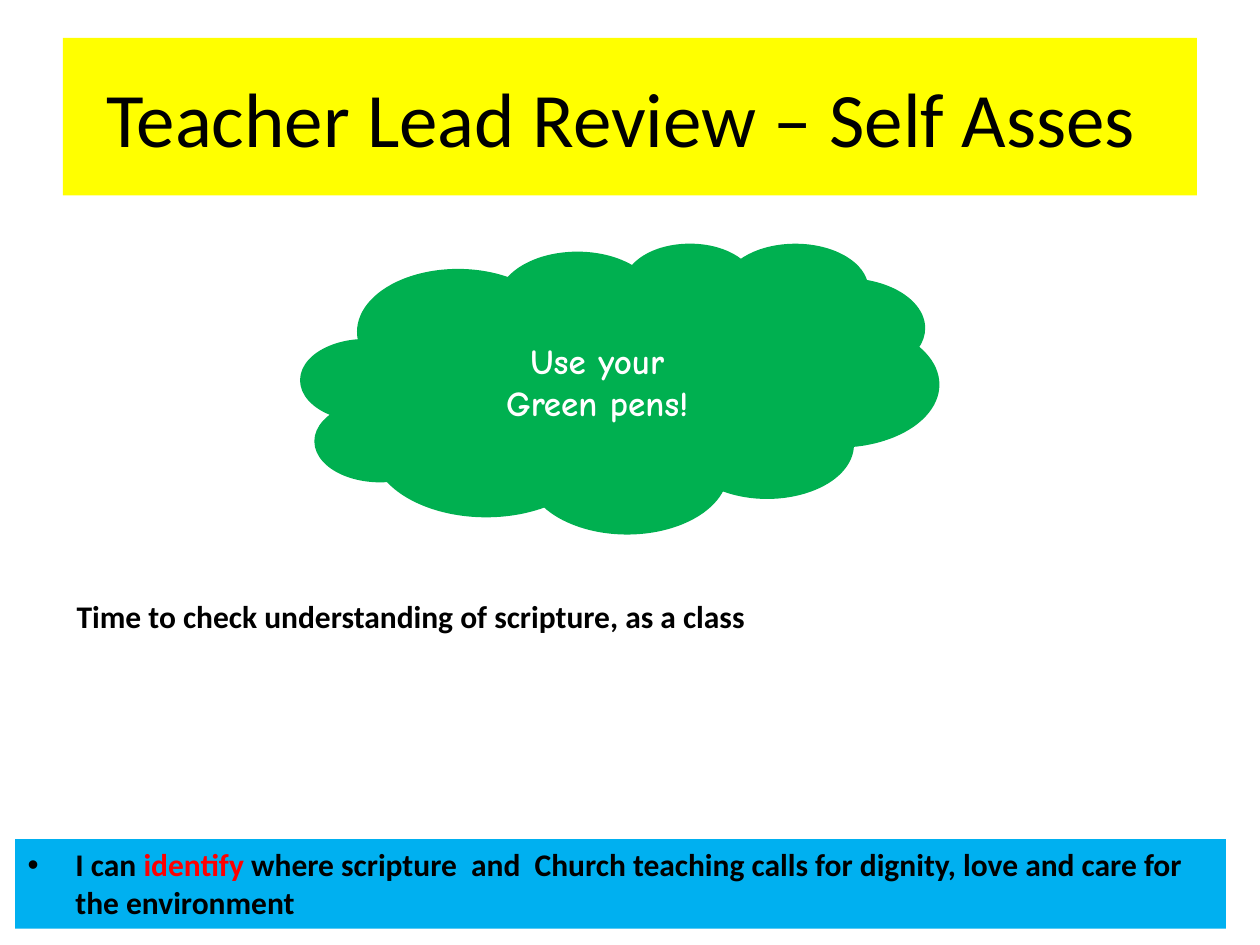
from dataclasses import dataclass

from lxml.etree import SubElement
from pptx import Presentation
from pptx.dml.color import RGBColor
from pptx.enum.shapes import MSO_SHAPE
from pptx.enum.text import MSO_ANCHOR, MSO_AUTO_SIZE, PP_ALIGN
from pptx.oxml.ns import qn
from pptx.util import Inches, Pt


@dataclass(frozen=True)
class Theme:
    yellow: str = "FFFF00"
    green: str = "00B050"
    blue: str = "00B0F0"
    red: str = "FF0000"
    black: str = "000000"
    white: str = "FFFFFF"
    body_font: str = "Calibri"
    pen_font: str = "Comic Neue"
    title_size: int = 44
    pen_size: int = 20
    body_size: int = 18
    outline: int = 2


THEME = Theme()
WIDTH, HEIGHT = Inches(10), Inches(7.5)
COLUMNS, ROWS = 100, 75  # square grid cells


def place(column, row, columns, rows):
    """Turn grid cells into left, top, width and height."""
    across, down = WIDTH / COLUMNS, HEIGHT / ROWS
    return (round(column * across), round(row * down),
            round(columns * across), round(rows * down))


def set_values(target, values):
    for name, value in values.items():
        setattr(target, name, value)


def write(shape, paragraphs, size, font=THEME.body_font, bold=True,
          align=PP_ALIGN.LEFT, **frame_values):
    """Fill a shape with paragraphs, each a list of (text, colour) runs."""
    frame = shape.text_frame
    set_values(frame, {"word_wrap": True, **frame_values})
    for index, runs in enumerate(paragraphs):
        paragraph = frame.add_paragraph() if index else frame.paragraphs[0]
        paragraph.alignment = align
        for text, color in runs:
            run = paragraph.add_run()
            run.text = text
            set_values(run.font, {"size": Pt(size), "name": font, "bold": bold})
            run.font.color.rgb = RGBColor.from_string(color)


def add_panel(slide, kind, cells, fill, outline=0):
    shape = slide.shapes.add_shape(kind, *place(*cells))
    shape.shadow.inherit = False
    shape.fill.solid()
    shape.fill.fore_color.rgb = RGBColor.from_string(fill)
    if outline:
        shape.line.color.rgb = RGBColor.from_string(fill)
        shape.line.width = Pt(outline)
    else:
        shape.line.fill.background()
    return shape


def add_bullet(paragraph, indent):
    properties = paragraph._p.get_or_add_pPr()
    properties.set("marL", str(indent))
    properties.set("indent", str(-indent))
    SubElement(properties, qn("a:buFont"), typeface="Arial")
    SubElement(properties, qn("a:buChar"), char="•")


def main():
    presentation = Presentation()
    set_values(presentation, {"slide_width": WIDTH, "slide_height": HEIGHT})
    slide = presentation.slides.add_slide(presentation.slide_layouts[6])
    centred = {"align": PP_ALIGN.CENTER, "vertical_anchor": MSO_ANCHOR.MIDDLE}
    growing = {"vertical_anchor": MSO_ANCHOR.TOP,
               "auto_size": MSO_AUTO_SIZE.SHAPE_TO_FIT_TEXT}

    # Title banner
    title = add_panel(slide, MSO_SHAPE.RECTANGLE, (5, 3, 90, 12.5), THEME.yellow)
    write(title, [[("Teacher Lead Review – Self Asses ", THEME.black)]],
          THEME.title_size, bold=False, **centred)

    # Green pen reminder
    cloud = add_panel(slide, MSO_SHAPE.CLOUD, (24, 19.4, 50.4, 22.8),
                      THEME.green, THEME.outline)
    write(cloud, [[(line, THEME.white)] for line in ("Use your", "Green pens!")],
          THEME.pen_size, THEME.pen_font, **centred)

    # Learning objective
    objective = add_panel(slide, MSO_SHAPE.RECTANGLE, (1.2, 66.6, 96.1, 7.1),
                          THEME.blue)
    write(objective, [[
        ("I can ", THEME.black),
        ("identify", THEME.red),
        (" where scripture  and  Church teaching calls for dignity, "
         "love and care for the environment", THEME.black),
    ]], THEME.body_size, **growing)
    add_bullet(objective.text_frame.paragraphs[0], Inches(0.38))

    # Class task
    task = slide.shapes.add_textbox(*place(5.1, 46.9, 90.6, 4))
    write(task, [[("Time to check understanding of scripture, as a class",
                   THEME.black)]], THEME.body_size, **growing)

    presentation.save("out.pptx")


if __name__ == "__main__":
    main()
